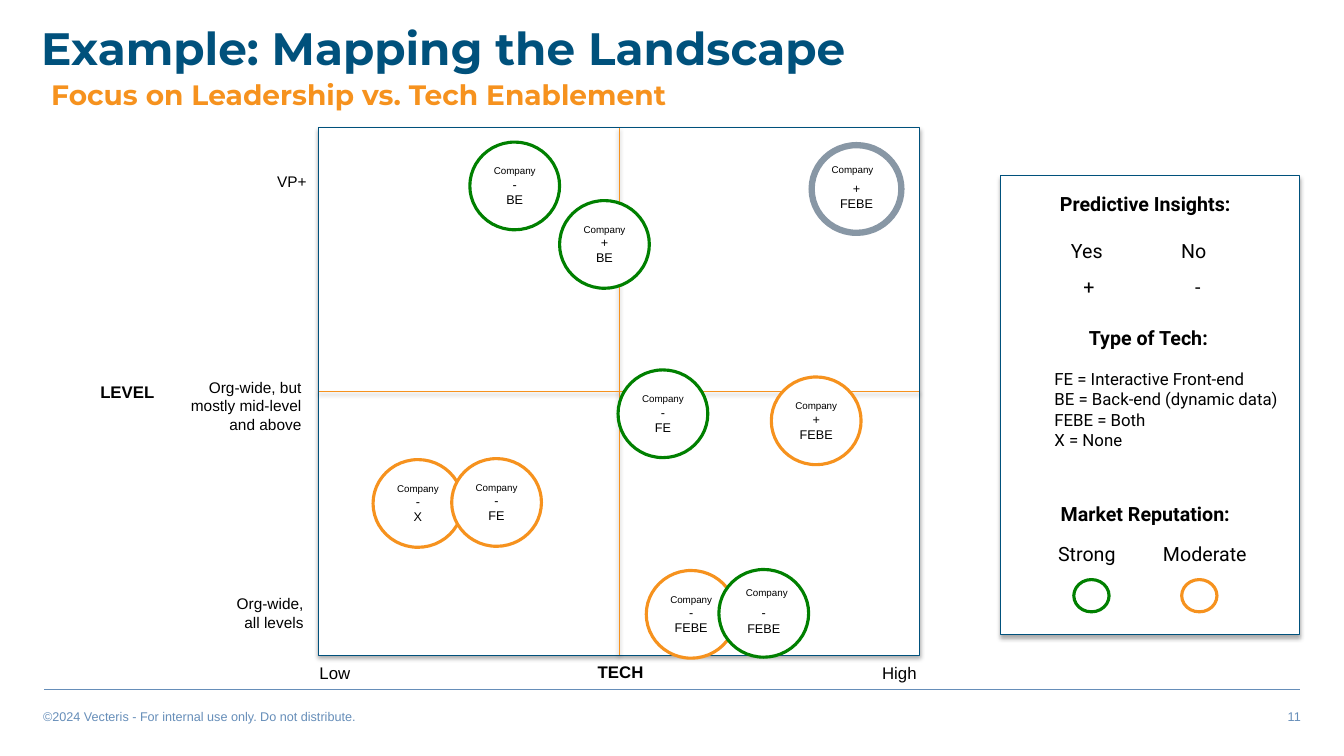
"""Build a slide that maps companies by organisational level and technology."""
from dataclasses import dataclass

from lxml import etree
from pptx import Presentation
from pptx.dml.color import RGBColor
from pptx.enum import shapes, text
from pptx.oxml.ns import qn
from pptx.util import Inches, Pt


@dataclass(frozen=True)
class Theme:
    navy: str = "00517C"
    orange: str = "F6921E"
    green: str = "008000"
    grey: str = "8897A5"
    blue: str = "668EB9"
    black: str = "000000"
    white: str = "FFFFFF"
    title: float = 32.4
    subtitle: float = 20
    legend: float = 14
    axis: float = 12
    level: float = 11
    small: float = 9
    tiny: float = 7


theme = Theme()
LEFT, CENTER, RIGHT = text.PP_ALIGN.LEFT, text.PP_ALIGN.CENTER, text.PP_ALIGN.RIGHT
TOP, MIDDLE = text.MSO_ANCHOR.TOP, text.MSO_ANCHOR.MIDDLE


def write(sp, lines, align=LEFT, anchor=TOP, color=theme.black, font="Arial", bold=False,
          top=0.05, spacing=None):
    """Fill a shape with (wording, size) lines."""
    tf = sp.text_frame
    frame = {"word_wrap": True, "vertical_anchor": anchor, "margin_top": Inches(top),
             "margin_bottom": Inches(0.05)}
    for name, value in frame.items():
        setattr(tf, name, value)
    for i, (wording, size) in enumerate(lines):
        p = tf.add_paragraph() if i else tf.paragraphs[0]
        p.alignment = align
        p.line_spacing = spacing
        r = p.add_run()
        r.text = wording
        for name, value in {"name": font, "size": Pt(size), "bold": bold}.items():
            setattr(r.font, name, value)
        r.font.color.rgb = RGBColor.from_string(color)


def outline(sp, color, width, shadow=None):
    """Style the line and the shadow of a shape or connector."""
    sp.line.color.rgb = RGBColor.from_string(color)
    sp.line.width = Pt(width)
    spPr = sp._element.spPr
    effects = etree.SubElement(spPr, qn("a:effectLst"))
    if shadow:
        outer = etree.SubElement(effects, qn("a:outerShdw"), blurRad=str(Pt(3.1)),
                                 dist=str(Pt(1.8)), dir="5400000", rotWithShape="0")
        clr = etree.SubElement(outer, qn("a:srgbClr"), val=theme.black)
        etree.SubElement(clr, qn("a:alpha"), val=str(shadow * 1000))


prs = Presentation()
prs.slide_width, prs.slide_height = Inches(13.33), Inches(7.5)
s = prs.slides.add_slide(prs.slide_layouts[6])

footer_rule = s.shapes.add_connector(
    shapes.MSO_CONNECTOR.STRAIGHT, Inches(0.44), Inches(6.84), Inches(12.89), Inches(6.84))
outline(footer_rule, theme.blue, 1)

panels = []
for x, y, w, h in [(9.92, 1.74, 2.97, 4.56), (3.16, 1.27, 5.96, 5.23)]:
    sp = s.shapes.add_shape(shapes.MSO_SHAPE.RECTANGLE, Inches(x), Inches(y), Inches(w), Inches(h))
    sp.fill.solid()
    sp.fill.fore_color.rgb = RGBColor.from_string(theme.white)
    outline(sp, theme.navy, 0.75, 33)
    panels.append(sp)
legend, matrix = panels

for start, end in [(0, 2), (1, 3)]:
    axis = s.shapes.add_connector(shapes.MSO_CONNECTOR.STRAIGHT, 0, 0, 0, 0)
    axis.begin_connect(matrix, start)
    axis.end_connect(matrix, end)
    outline(axis, theme.orange, 0.75, 36)

company = ("Company", theme.tiny)
circles = [
    (6.41, 5.66, theme.orange, "-", "FEBE"),
    (7.65, 3.74, theme.orange, "+", "FEBE"),
    (7.13, 5.65, theme.green, "-", "FEBE"),
    (6.13, 3.67, theme.green, "-", "FE"),
    (4.66, 1.41, theme.green, "-", "BE"),
    (5.55, 1.99, theme.green, "+", "BE"),
    (8.05, 1.44, theme.grey, "+", "FEBE"),
    (3.70, 4.56, theme.orange, "-", "X"),
    (4.48, 4.55, theme.orange, "-", "FE"),
]
separate_names = {(7.13, 5.65): (7.3, 5.77), (8.05, 1.44): (8.15, 1.57)}
for x, y, color, insight, tech in circles:
    sp = s.shapes.add_shape(
        shapes.MSO_SHAPE.OVAL, Inches(x), Inches(y), Inches(0.89), Inches(0.87))
    sp.fill.solid()
    sp.fill.fore_color.rgb = RGBColor.from_string(theme.white)
    outline(sp, color, 4.5 if color == theme.grey else 2.25)
    sp.text_frame.margin_left = sp.text_frame.margin_right = Inches(0.05)
    lines = [(insight, theme.small), (tech, theme.small)]
    name_at = separate_names.get((x, y))
    if name_at:
        name = s.shapes.add_textbox(
            Inches(name_at[0]), Inches(name_at[1]), Inches(0.7), Inches(0.22))
        write(name, [company])
    else:
        lines.insert(0, company)
    write(sp, lines, CENTER, MIDDLE, top=0.19 if name_at else 0.05)

for x, color in [(10.65, theme.green), (11.72, theme.orange)]:
    sp = s.shapes.add_shape(
        shapes.MSO_SHAPE.OVAL, Inches(x), Inches(5.75), Inches(0.35), Inches(0.32))
    sp.fill.solid()
    sp.fill.fore_color.rgb = RGBColor.from_string(theme.white)
    outline(sp, color, 2.25)

legend_entries = [
    ("Predictive Insights:", 11.36, 2.02, True),
    ("Yes", 10.78, 2.49, False),
    ("No", 11.84, 2.49, False),
    ("+", 10.8, 2.84, False),
    ("-", 11.88, 2.84, False),
    ("Type of Tech:", 11.39, 3.35, True),
    ("Market Reputation:", 11.36, 5.1, True),
    ("Strong", 10.78, 5.49, False),
    ("Moderate", 11.95, 5.49, False),
]
for wording, x, y, bold in legend_entries:
    w = 2.6 if bold else 1.16
    sp = s.shapes.add_textbox(Inches(x - w / 2), Inches(y - 0.17), Inches(w), Inches(0.34))
    write(sp, [(wording, theme.legend)], CENTER, MIDDLE, font="Roboto", bold=bold)

tech_types = ["FE = Interactive Front-end", "BE = Back-end (dynamic data)", "FEBE = Both", "X = None"]
sp = s.shapes.add_textbox(Inches(10.36), Inches(3.6), Inches(2.5), Inches(0.92))
write(sp, [(wording, theme.axis) for wording in tech_types], anchor=MIDDLE, font="Roboto")

labels = [
    ("VP+", 2.43, 1.66, 0.71, 0.29, theme.level, RIGHT, False),
    ("Org-wide, but mostly mid-level and above", 1.66, 3.7, 1.43, 0.66, theme.level, RIGHT, False),
    ("Org-wide, all levels", 2.1, 5.85, 1.01, 0.47, theme.level, RIGHT, False),
    ("LEVEL", 0.67, 3.74, 0.96, 0.3, theme.axis, RIGHT, True),
    ("Low", 3.07, 6.53, 0.71, 0.3, theme.axis, LEFT, False),
    ("TECH", 5.83, 6.52, 0.71, 0.3, theme.axis, LEFT, True),
    ("High", 8.48, 6.53, 0.71, 0.3, theme.axis, RIGHT, False),
]
for wording, x, y, w, h, size, align, bold in labels:
    sp = s.shapes.add_textbox(Inches(x), Inches(y), Inches(w), Inches(h))
    write(sp, [(wording, size)], align, bold=bold)

footers = [("©2024 Vecteris - For internal use only. Do not distribute.", 0.33, LEFT),
           ("11", 7.67, RIGHT)]
for wording, x, align in footers:
    sp = s.shapes.add_textbox(Inches(x), Inches(6.98), Inches(5.33), Inches(0.25))
    write(sp, [(wording, theme.small)], align, color=theme.blue)

headings = [
    ("Example: Mapping the Landscape", 0.31, 0.21, 0.76, theme.title, theme.navy, TOP),
    ("Focus on Leadership vs. Tech Enablement", 0.41, 0.73, 0.45, theme.subtitle, theme.orange, MIDDLE),
]
for wording, x, y, h, size, color, anchor in headings:
    sp = s.shapes.add_textbox(Inches(x), Inches(y), Inches(8.52), Inches(h))
    write(sp, [(wording, size)], anchor=anchor, color=color, font="Montserrat", bold=True, spacing=0.9)

prs.save("out.pptx")
